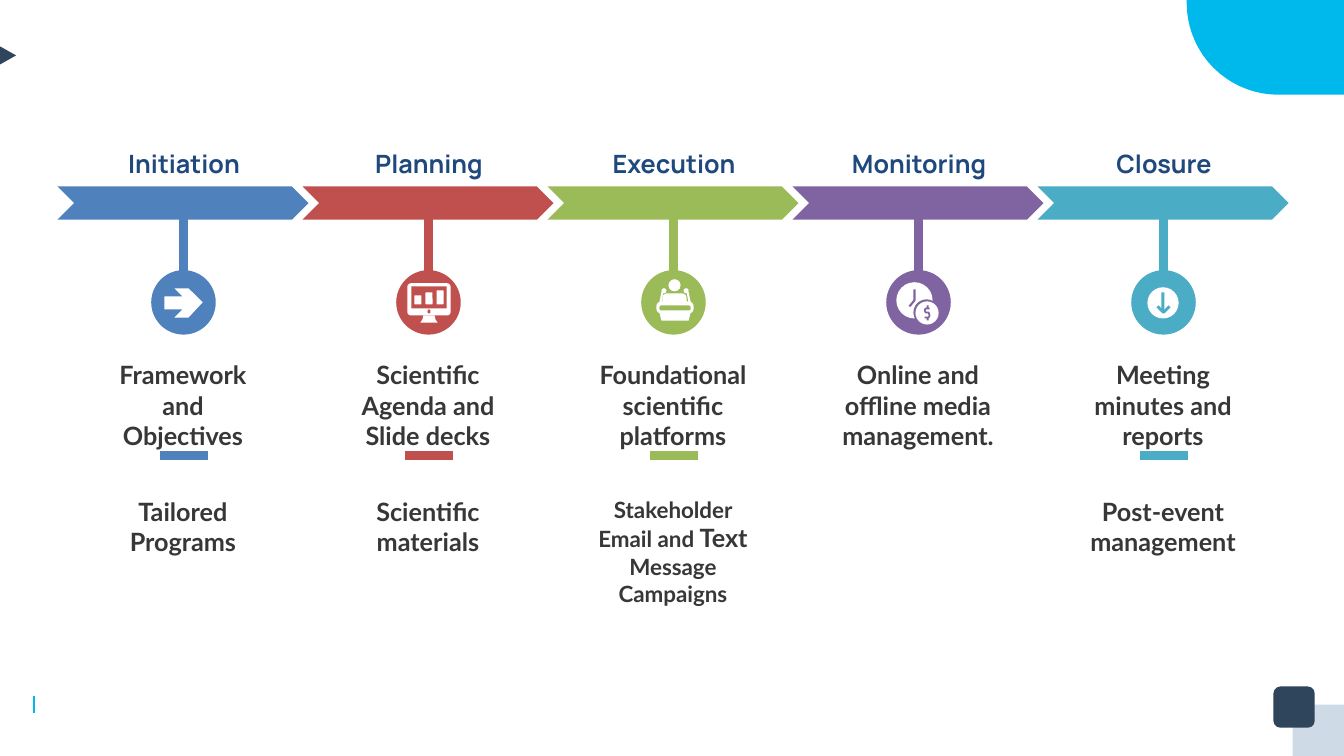
from math import cos, radians, sin

from lxml import etree
from pptx import Presentation
from pptx.dml.color import RGBColor
from pptx.enum.shapes import MSO_CONNECTOR, MSO_SHAPE
from pptx.enum.text import MSO_AUTO_SIZE, PP_ALIGN
from pptx.oxml.ns import qn
from pptx.util import Inches, Pt

COLORS = {
    "sky": "00B9EC", "pale": "CEDAE6", "navy": "2E455C", "white": "FFFFFF",
    "heading": "1F497D", "body": "373737", "blue": "4F81BD", "red": "C0504D",
    "green": "9BBB59", "purple": "8064A2", "teal": "4BACC6",
}
# Heading, colour, upper text, lower text as (words, size) runs
PHASES = [
    ("Initiation", "blue", "Framework and Objectives", [("Tailored Programs", 18)]),
    ("Planning", "red", "Scientific Agenda and Slide decks", [("Scientific materials", 18)]),
    ("Execution", "green", "Foundational scientific platforms",
     [("Stakeholder Email and ", 16), ("Text", 18), (" Message Campaigns", 16)]),
    ("Monitoring", "purple", "Online and offline media management.", []),
    ("Closure", "teal", "Meeting minutes and reports", [("Post-event management", 18)]),
]
COLUMN_STEP = 2.43

presentation = Presentation()
presentation.slide_width = Inches(13.33)
presentation.slide_height = Inches(7.5)
slide = presentation.slides.add_slide(presentation.slide_layouts[6])
shapes = slide.shapes


def add_block(kind, left, top, width, height, color, rounding=None):
    shape = shapes.add_shape(kind, Inches(left), Inches(top), Inches(width), Inches(height))
    shape.shadow.inherit = False
    shape.fill.solid()
    shape.fill.fore_color.rgb = RGBColor.from_string(COLORS[color])
    shape.line.fill.background()
    if rounding is not None:
        shape.adjustments[0] = rounding


def add_outline(points, color, stroke=None):
    """Filled outline, or an open stroke when a width in points is given."""
    corners = [(Inches(x), Inches(y)) for x, y in points]
    builder = shapes.build_freeform(*corners[0], scale=1.0)
    builder.add_line_segments(corners[1:], close=stroke is None)
    shape = builder.convert_to_shape()
    shape.shadow.inherit = False
    if stroke:
        shape.fill.background()
        shape.line.color.rgb = RGBColor.from_string(COLORS[color])
        shape.line.width = Pt(stroke)
    else:
        shape.fill.solid()
        shape.fill.fore_color.rgb = RGBColor.from_string(COLORS[color])
        shape.line.fill.background()


# Corner decoration
arc = [(12.68 - 0.91 * cos(radians(angle)), 0.03 + 0.91 * sin(radians(angle)))
       for angle in range(0, 91, 5)]
add_outline([(13.33, 0), (11.77, 0), *arc, (13.33, 0.94)], "sky")
add_block(MSO_SHAPE.RECTANGLE, 12.82, 6.99, 0.51, 0.51, "pale")
add_block(MSO_SHAPE.ROUNDED_RECTANGLE, 12.63, 6.81, 0.41, 0.41, "navy", 0.17)
add_outline([(0, 0.46), (0, 0.64), (0.16, 0.55)], "navy")

# Phase columns: chevron, circle and texts
lines = [(0.34, 6.9, 0.34, 7.07, "sky", 1.75)]
for index, (heading, color, upper, lower) in enumerate(PHASES):
    offset = index * COLUMN_STEP
    center = 1.82 + offset
    add_block(MSO_SHAPE.CHEVRON, 0.57 + offset, 1.85, 2.49, 0.33, color)
    add_block(MSO_SHAPE.OVAL, center - 0.32, 2.68, 0.64, 0.64, color)
    lines.append((center, 2.08, center, 3.09, color, 6))
    if lower:
        lines.append((center + 0.24, 4.52, center - 0.23, 4.52, color, 6))

    texts = [
        (1.42, 1.85, 0.56, [(heading, 18)], "Manrope", "heading"),
        (3.52, 1.83, 1.01, [(upper, 18)], "Lato", "body"),
        (4.87, 1.83, 0.71 if len(lower) == 1 else 1.21, lower, "Lato", "body"),
    ]
    for top, width, height, runs, font_name, font_color in texts:
        if not runs:
            continue
        box = shapes.add_textbox(Inches(0.9 + offset), Inches(top), Inches(width), Inches(height))
        text_frame = box.text_frame
        text_frame.word_wrap = True
        text_frame.auto_size = MSO_AUTO_SIZE.SHAPE_TO_FIT_TEXT
        paragraph = text_frame.paragraphs[0]
        paragraph.alignment = PP_ALIGN.CENTER
        for words, size in runs:
            run = paragraph.add_run()
            run.text = words
            run.font.name = font_name
            run.font.size = Pt(size)
            run.font.bold = True
            run.font.color.rgb = RGBColor.from_string(COLORS[font_color])

# Microphone stems on the speaker icon
lines += [(6.55, 3, 6.57, 2.9, "white", 1.5), (6.84, 3, 6.82, 2.9, "white", 1.5)]

# Straight lines
for x1, y1, x2, y2, color, width in lines:
    connector = shapes.add_connector(
        MSO_CONNECTOR.STRAIGHT, Inches(x1), Inches(y1), Inches(x2), Inches(y2))
    connector.line.color.rgb = RGBColor.from_string(COLORS[color])
    connector.line.width = Pt(width)
    etree.SubElement(connector._element.spPr, qn("a:effectLst"))

# Initiation icon: arrow
add_outline([(1.63, 2.94), (1.81, 2.94), (1.73, 2.86), (1.87, 2.86), (2.01, 3),
             (1.87, 3.15), (1.73, 3.15), (1.81, 3.07), (1.63, 3.07)], "white")

# Planning icon: monitor with bars
add_block(MSO_SHAPE.ROUNDED_RECTANGLE, 4.04, 2.81, 0.43, 0.32, "white", 0.11)
add_block(MSO_SHAPE.RECTANGLE, 4.08, 2.84, 0.35, 0.22, "red")
for bar, height in enumerate([0.09, 0.12, 0.14]):
    add_block(MSO_SHAPE.ROUNDED_RECTANGLE, 4.11 + 0.11 * bar, 3.02 - height,
              0.07, height, "white", 0.12)
add_block(MSO_SHAPE.OVAL, 4.24, 3.07, 0.03, 0.04, "red")
add_outline([(4.2, 3.13), (4.31, 3.13), (4.32, 3.17), (4.34, 3.2),
             (4.17, 3.2), (4.19, 3.17)], "white")

# Execution icon: speaker at a lectern
add_block(MSO_SHAPE.OVAL, 6.63, 2.77, 0.12, 0.12, "white")
add_block(MSO_SHAPE.ROUND_2_SAME_RECTANGLE, 6.57, 2.91, 0.24, 0.09, "white", 0.5)
for microphone in (6.56, 6.78):
    add_block(MSO_SHAPE.OVAL, microphone, 2.86, 0.05, 0.05, "white")
add_block(MSO_SHAPE.ROUNDED_RECTANGLE, 6.51, 2.99, 0.37, 0.12, "white", 0.4)
add_block(MSO_SHAPE.ROUNDED_RECTANGLE, 6.54, 3.03, 0.31, 0.05, "green", 0.4)
add_outline([(6.54, 3.1), (6.85, 3.1), (6.83, 3.18), (6.56, 3.18)], "white")

# Monitoring icon: clock and coin
add_block(MSO_SHAPE.OVAL, 8.89, 2.8, 0.36, 0.36, "white")
add_outline([(9.07, 2.87), (9.07, 2.98), (9.02, 3.04)], "purple", 1.5)
add_block(MSO_SHAPE.OVAL, 9.06, 2.97, 0.26, 0.26, "purple")
add_block(MSO_SHAPE.OVAL, 9.08, 2.99, 0.23, 0.23, "white")
add_outline([(9.22, 3.06), (9.18, 3.06), (9.17, 3.08), (9.18, 3.1), (9.21, 3.1),
             (9.22, 3.13), (9.21, 3.15), (9.17, 3.15)], "purple", 1.25)
for top in (3.03, 3.15):
    add_block(MSO_SHAPE.RECTANGLE, 9.19, top, 0.02, 0.03, "purple")

# Closure icon: downward arrow in a disc
add_block(MSO_SHAPE.OVAL, 11.38, 2.85, 0.31, 0.31, "white")
add_block(MSO_SHAPE.RECTANGLE, 11.52, 2.9, 0.03, 0.19, "teal")
add_outline([(11.48, 3.04), (11.54, 3.1), (11.6, 3.04)], "teal", 2)

presentation.save("out.pptx")
